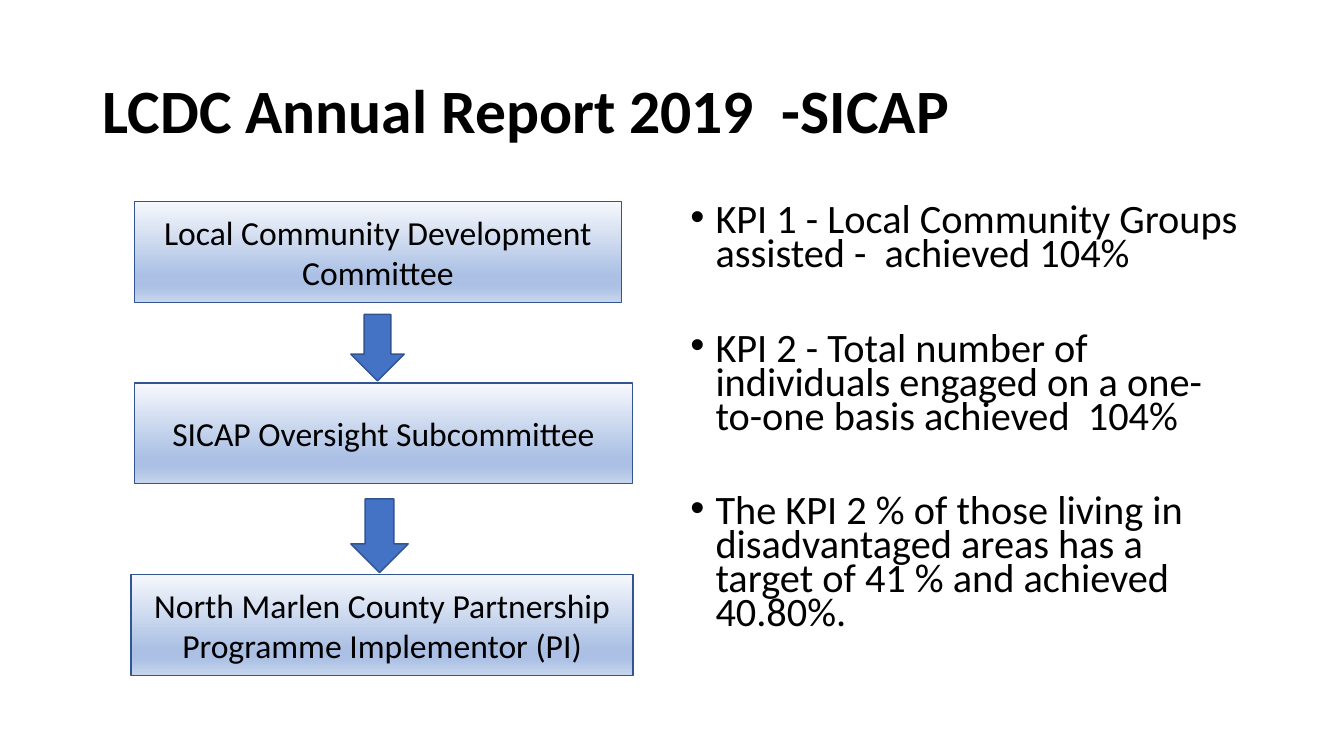
from dataclasses import dataclass

from lxml.etree import SubElement
from pptx import Presentation
from pptx.dml.color import RGBColor
from pptx.enum.shapes import MSO_SHAPE
from pptx.enum.text import MSO_ANCHOR, PP_ALIGN
from pptx.oxml.ns import qn
from pptx.util import Pt

BLACK, BLUE, EDGE = "000000", "4472C4", "325491"
STOPS = {0: "F6F8FC", 74: "ABC0E4", 83: "ABC0E4", 100: "C7D5ED"}


@dataclass
class Item:
    left: float
    top: float
    width: float
    height: float
    text: str = ""


TITLE = Item(66, 28.8, 828, 104.4, "LCDC Annual Report 2019  -SICAP")
BODY = Item(486, 144, 408, 342.7)
BOXES = [
    Item(96, 144, 347.8, 72, "Local Community Development Committee"),
    Item(96, 273.6, 355.7, 72, "SICAP Oversight Subcommittee"),
    Item(93.6, 410.4, 358.6, 72,
         "North Marlen County Partnership\nProgramme Implementor (PI)"),
]
ARROWS = [Item(250.6, 224.6, 38.2, 47.5), Item(250.6, 356.4, 41, 52.6)]
POINTS = [
    "KPI 1 - Local Community Groups assisted -  achieved 104%",
    "KPI 2 - Total number of individuals engaged on a one-to-one basis achieved  104%",
    "The KPI 2 % of those living in disadvantaged areas has a target of 41 % and achieved 40.80%.",
]


def color(value: str) -> RGBColor:
    return RGBColor.from_string(value)


def apply(target, values: dict) -> None:
    for name, value in values.items():
        setattr(target, name, value)


def place(item: Item) -> tuple:
    return Pt(item.left), Pt(item.top), Pt(item.width), Pt(item.height)


def style(para, size: float, bold: bool = False, **form) -> None:
    apply(para, form)
    apply(para.font, {"name": "Calibri", "size": Pt(size), "bold": bold})
    para.font.color.rgb = color(BLACK)


def shade(shape) -> None:
    """Fill from top to bottom with the shared colour stops."""
    shape.fill.gradient()
    shape.fill.gradient_angle = 270
    stops = shape._element.spPr.find(qn("a:gradFill")).find(qn("a:gsLst"))
    stops.clear()
    for spot, value in STOPS.items():
        stop = SubElement(stops, qn("a:gs"), pos=str(spot * 1000))
        SubElement(stop, qn("a:srgbClr"), val=value)


def draw(slide, kind: MSO_SHAPE, item: Item):
    shape = slide.shapes.add_shape(kind, *place(item))
    shape.shadow.inherit = False
    shape.line.color.rgb = color(EDGE)
    shape.line.width = Pt(1)
    return shape


def box(slide, item: Item) -> None:
    shape = draw(slide, MSO_SHAPE.RECTANGLE, item)
    shade(shape)
    frame = shape.text_frame
    apply(frame, {"text": item.text, "word_wrap": True,
                  "vertical_anchor": MSO_ANCHOR.MIDDLE})
    for para in frame.paragraphs:
        style(para, 24, alignment=PP_ALIGN.CENTER)


def arrow(slide, item: Item) -> None:
    shape = draw(slide, MSO_SHAPE.DOWN_ARROW, item)
    shape.fill.solid()
    shape.fill.fore_color.rgb = color(BLUE)


def head(slide, item: Item) -> None:
    title = slide.shapes.title
    apply(title, dict(zip(("left", "top", "width", "height"), place(item))))
    apply(title.text_frame, {"text": item.text, "word_wrap": True,
                             "vertical_anchor": MSO_ANCHOR.MIDDLE})
    style(title.text_frame.paragraphs[0], 44, True,
          alignment=PP_ALIGN.LEFT, line_spacing=0.9)


def bullets(slide, item: Item, points: list[str]) -> None:
    frame = slide.shapes.add_textbox(*place(item)).text_frame
    apply(frame, {"text": "\n".join(points), "word_wrap": True})
    for index, para in enumerate(frame.paragraphs):
        style(para, 28.8, line_spacing=0.7,
              space_before=Pt(43.6 if index else 10))
        props = para._p.get_or_add_pPr()
        props.set("marL", str(Pt(18)))
        props.set("indent", str(Pt(-18)))
        SubElement(props, qn("a:buFont"), typeface="Arial")
        SubElement(props, qn("a:buChar"), char="•")
        # Text defaults come after the bullet in the schema
        props.append(props.find(qn("a:defRPr")))


def main() -> None:
    deck = Presentation()
    apply(deck, {"slide_width": Pt(960), "slide_height": Pt(540)})
    slide = deck.slides.add_slide(deck.slide_layouts[5])

    # Title and key figures
    head(slide, TITLE)
    bullets(slide, BODY, POINTS)

    # Reporting chain
    for item in BOXES:
        box(slide, item)
    for item in ARROWS:
        arrow(slide, item)

    deck.save("out.pptx")


if __name__ == "__main__":
    main()
